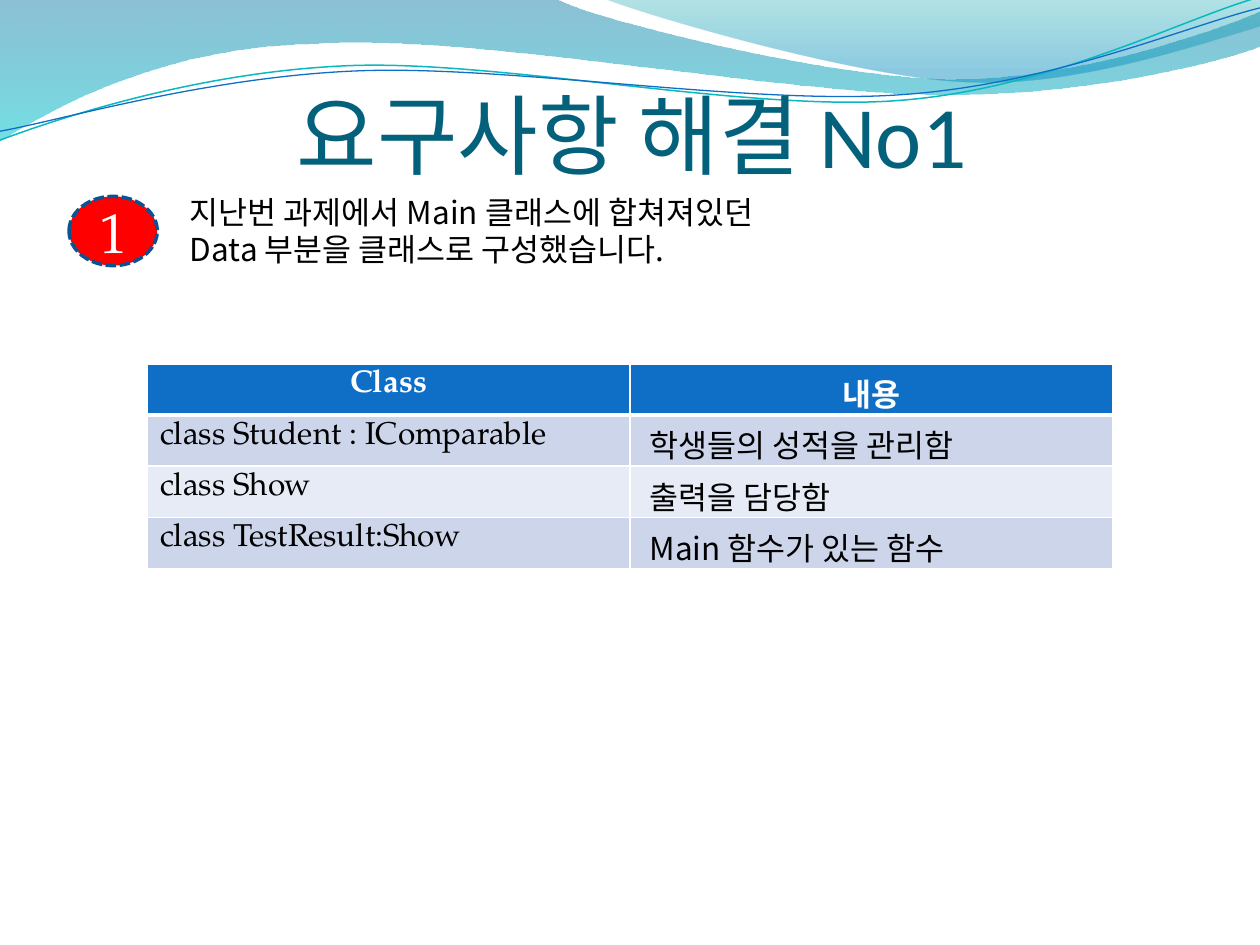
from dataclasses import dataclass

from lxml.etree import SubElement
from pptx import Presentation
from pptx.dml.color import RGBColor
from pptx.enum.dml import MSO_LINE_DASH_STYLE as Dash
from pptx.enum.shapes import MSO_SHAPE as Shape
from pptx.enum.text import MSO_ANCHOR as Anchor, MSO_AUTO_SIZE as AutoSize, PP_ALIGN as Align
from pptx.oxml.ns import qn
from pptx.util import Pt


@dataclass(frozen=True)
class Theme:
    title: str = "04617B"
    text: str = "000000"
    light: str = "FFFFFF"
    badge: str = "FF0000"
    badge_line: str = "0B5292"
    header: str = "0F6FC6"
    bands: tuple = ("CCD5EA", "E7EBF5")
    teal_line: str = "0AB8BF"
    blue_line: str = "0F6FC6"
    # gradient stops: position, colour, opacity in percent
    wide_wave: tuple = ((0, "0074A1", 45), (1, "00C6CF", 55))
    right_wave: tuple = ((0, "00A1A9", 30), (0.8, "008BBF", 45))
    title_font: str = "Calibri"
    serif: str = "TeX Gyre Pagella"
    korean: str = "Noto Sans CJK KR"
    title_size: int = 50
    badge_size: int = 32
    body_size: int = 18


THEME = Theme()

# Each path starts at its first point; a step of six numbers is a Bézier curve
# (two control points and an end), a step of two is a straight line.
WIDE_WAVE = [
    (0, 0), (317, -1),
    (343, 12, 478, 45, 546, 45), (614, 45, 690, 19, 720, 6.5),
    (721, 26),
    (708, 32, 626, 55, 537, 54), (448, 54, 275, 20, 185, 24.5),
    (93, 26, 33, 60, -1, 81),
]
RIGHT_WAVE = [
    (345, -1), (367, 8, 491, 45, 554, 47),
    (616, 50, 692, 23, 720, 15), (720, 0),
]
TEAL_CURVE = [
    (-1.4, 63.1), (34.2, 51.7, 114.3, 29.4, 199.4, 30),
    (284.4, 30.5, 425.8, 67.2, 512, 64.7), (599.2, 62.3, 676.1, 25.9, 720.6, 15.5),
]
BLUE_CURVE = [
    (-1.1, 58), (33.1, 53.6, 118.2, 32.6, 204.3, 33.2),
    (290.3, 33.7, 429.1, 63.8, 515.3, 61.4), (601.5, 59.4, 678.4, 30, 721.4, 21.5),
]
CURVE_TILT = -2.7

TABLE_ROWS = [
    ("Class", "내용"),
    ("class Student : IComparable", " 학생들의 성적을 관리함"),
    ("class Show", " 출력을 담당함"),
    ("class TestResult:Show", " Main 함수가 있는 함수"),
]


def rgb(value):
    return RGBColor.from_string(value)


def format_text(frame, size, color, font, align=Align.LEFT, bold=False):
    for paragraph in frame.paragraphs:
        paragraph.alignment = align
        for run in paragraph.runs:
            run.font.size = Pt(size)
            run.font.bold = bold
            run.font.color.rgb = rgb(color)
            run.font.name = font


def set_margins(frame, left, top, right, bottom):
    frame.margin_left, frame.margin_top = Pt(left), Pt(top)
    frame.margin_right, frame.margin_bottom = Pt(right), Pt(bottom)


def add_outline(slide, path, close):
    """Draw the path through all its points, then bend the six-number steps."""
    start, *points = [
        (Pt(x), Pt(y)) for step in path for x, y in zip(step[::2], step[1::2])]
    builder = slide.shapes.build_freeform(*start)
    builder.add_line_segments(points, close=close)
    outline = builder.convert_to_shape()
    outline.shadow.inherit = False

    lines = iter(list(outline._element.iter(qn("a:lnTo"))))
    for step in path[1:]:
        line = next(lines)
        if len(step) == 6:
            line.addprevious(curve := line.makeelement(qn("a:cubicBezTo")))
            for part in (line, next(lines), next(lines)):
                curve.append(part[0])
                part.getparent().remove(part)
    return outline


def add_wave(slide, path, stops):
    wave = add_outline(slide, path, True)
    wave.line.fill.background()
    wave.fill.gradient()
    wave.fill.gradient_angle = 270
    for stop, (position, color, _) in zip(wave.fill.gradient_stops, stops):
        stop.position = position
        stop.color.rgb = rgb(color)
    colors = wave._element.spPr.iter(qn("a:srgbClr"))
    for color, (_, _, opacity) in zip(colors, stops):
        SubElement(color, qn("a:alpha")).set("val", str(opacity * 1000))


def add_curve(slide, path, color, width):
    curve = add_outline(slide, path, False)
    curve.rotation = CURVE_TILT
    curve.fill.background()
    curve.line.color.rgb = rgb(color)
    curve.line.width = Pt(width)


def add_backdrop(slide):
    add_wave(slide, WIDE_WAVE, THEME.wide_wave)
    add_wave(slide, RIGHT_WAVE, THEME.right_wave)
    add_curve(slide, TEAL_CURVE, THEME.teal_line, 0.85)
    add_curve(slide, BLUE_CURVE, THEME.blue_line, 0.75)


def place_title(slide, text, left, top, width, height):
    title = slide.shapes.title
    title.left, title.top, title.width, title.height = map(Pt, (left, top, width, height))
    frame = title.text_frame
    frame.text = text
    frame.auto_size = AutoSize.NONE
    frame.vertical_anchor = Anchor.BOTTOM
    set_margins(frame, 0, 3.6, 0, 0)
    format_text(frame, THEME.title_size, THEME.title, THEME.title_font, Align.CENTER)
    slide.shapes._spTree.append(title._element)  # in front of the waves


def add_numbered_note(slide, number, text, left, top, width, height):
    badge_width, badge_height, text_offset = 50.4, 39.6, 62
    badge = slide.shapes.add_shape(
        Shape.FLOWCHART_CONNECTOR, Pt(left), Pt(top + (height - badge_height) / 2),
        Pt(badge_width), Pt(badge_height))
    badge.shadow.inherit = False
    badge.fill.solid()
    badge.fill.fore_color.rgb = rgb(THEME.badge)
    badge.line.color.rgb = rgb(THEME.badge_line)
    badge.line.width = Pt(2)
    badge.line.dash_style = Dash.SQUARE_DOT
    badge.text_frame.text = number
    badge.text_frame.vertical_anchor = Anchor.MIDDLE
    format_text(badge.text_frame, THEME.badge_size, THEME.light, THEME.serif, Align.CENTER)

    note = slide.shapes.add_textbox(
        Pt(left + text_offset), Pt(top), Pt(width - text_offset), Pt(height))
    note.text_frame.word_wrap = True
    note.text_frame.auto_size = AutoSize.SHAPE_TO_FIT_TEXT
    note.text_frame.text = text
    format_text(note.text_frame, THEME.body_size, THEME.text, THEME.korean)


def underline_cell(cell, color, width):
    properties = cell._tc.get_or_add_tcPr()
    border = properties.makeelement(qn("a:lnB"), {"w": str(Pt(width))})
    properties.insert(0, border)
    SubElement(SubElement(border, qn("a:solidFill")), qn("a:srgbClr")).set("val", color)


def add_class_table(slide, rows, left, top, width, height):
    table = slide.shapes.add_table(
        len(rows), len(rows[0]), Pt(left), Pt(top), Pt(width), Pt(height)).table
    for r, row in enumerate(rows):
        is_header = r == 0
        fill = THEME.header if is_header else THEME.bands[(r - 1) % 2]
        for c, text in enumerate(row):
            cell = table.cell(r, c)
            cell.fill.solid()
            cell.fill.fore_color.rgb = rgb(fill)
            if is_header:
                underline_cell(cell, THEME.light, 3)
            cell.text_frame.text = text
            format_text(
                cell.text_frame, THEME.body_size,
                THEME.light if is_header else THEME.text,
                THEME.serif if is_header or c == 0 else THEME.korean,
                Align.CENTER if is_header else Align.LEFT, is_header)


def main():
    deck = Presentation()
    deck.slide_width, deck.slide_height = Pt(720), Pt(540)
    slide = deck.slides.add_slide(deck.slide_layouts[5])
    add_backdrop(slide)
    place_title(slide, "요구사항 해결 No1", 34, 16.5, 654, 90)
    add_numbered_note(
        slide, "1",
        "지난번 과제에서 Main 클래스에 합쳐져있던\nData 부분을 클래스로 구성했습니다.",
        39.5, 106.5, 647, 51)
    add_class_table(slide, TABLE_ROWS, 84.25, 208, 551.5, 116.8)
    deck.save("out.pptx")


if __name__ == "__main__":
    main()
